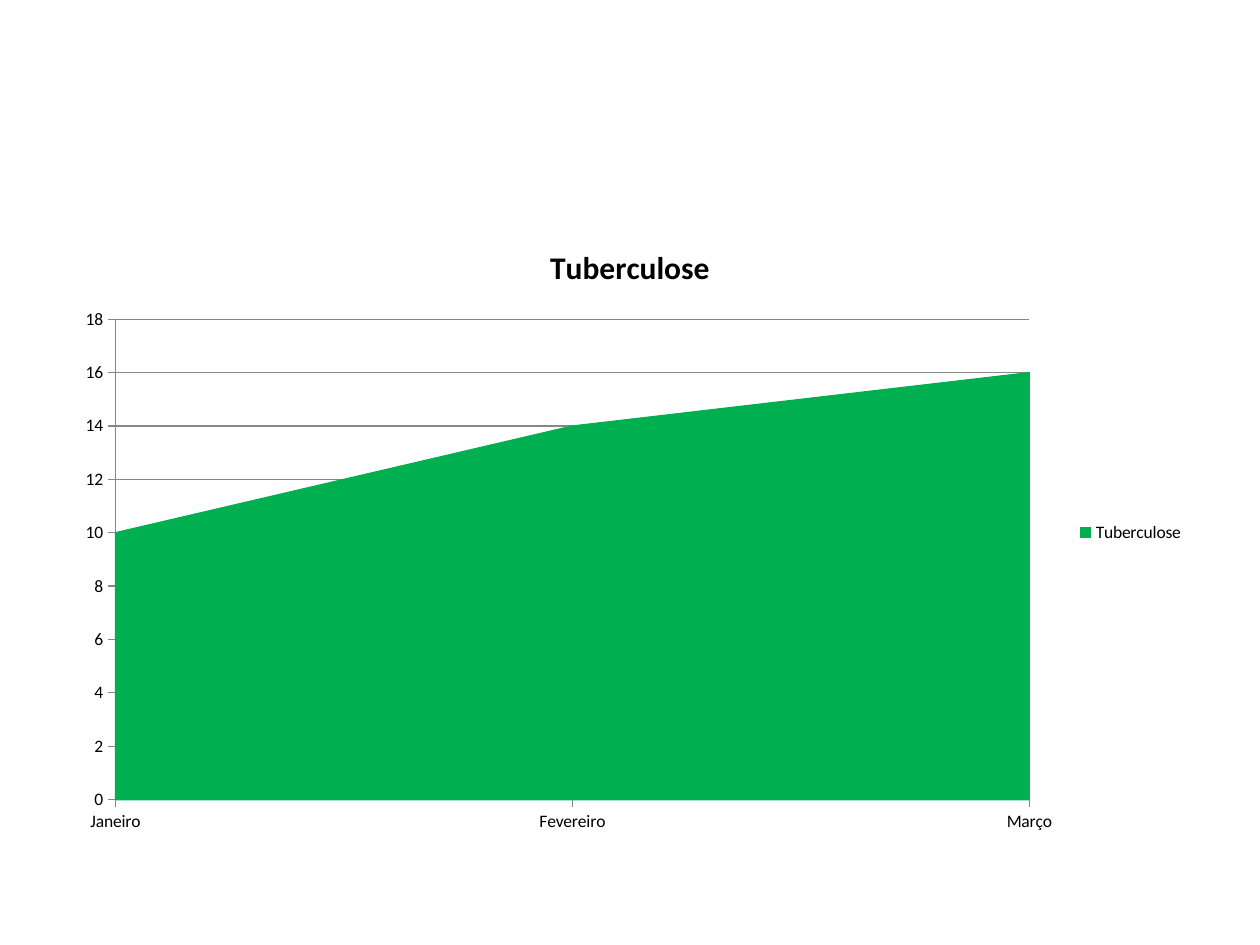
from typing import NamedTuple

import pptx
import pptx.chart.data
import pptx.dml.color
import pptx.enum.chart
import pptx.util

Cm = pptx.util.Cm
Pt = pptx.util.Pt
FONT = "Calibri"
BLACK = "000000"
GREY = "868686"


class Series(NamedTuple):
    name: str
    values: tuple[int, ...]
    color: str


MONTHS = ("Janeiro", "Fevereiro", "Março")
CASES = Series("Tuberculose", (10, 14, 16), "00B050")


def paint(target, color: str) -> None:
    if hasattr(target, "solid"):
        target.solid()
        target.fore_color.rgb = pptx.dml.color.RGBColor.from_string(color)
    else:
        target.color.rgb = pptx.dml.color.RGBColor.from_string(color)


def style(font, size: int, bold: bool = False) -> None:
    font.name = FONT
    font.size = Pt(size)
    font.bold = bold
    paint(font, BLACK)


def rule(line, color: str) -> None:
    paint(line, color)
    line.width = Pt(0.75)


def set_axis(axis, grid: bool) -> None:
    axis.has_major_gridlines = grid
    axis.major_tick_mark = pptx.enum.chart.XL_TICK_MARK.OUTSIDE
    axis.minor_tick_mark = pptx.enum.chart.XL_TICK_MARK.NONE
    rule(axis.format.line, GREY)
    if grid:
        rule(axis.major_gridlines.format.line, GREY)


def add_area(slide, series: Series) -> None:
    data = pptx.chart.data.CategoryChartData()
    data.categories = MONTHS
    data.add_series(series.name, series.values)
    chart = slide.shapes.add_chart(
        pptx.enum.chart.XL_CHART_TYPE.AREA,
        Cm(1.27), Cm(4.45), Cm(22.86), Cm(12.57), data,
    ).chart
    style(chart.font, 10)

    chart.has_title = True
    run = chart.chart_title.text_frame.paragraphs[0].add_run()
    run.text = series.name
    style(run.font, 18, True)
    chart.chart_title.include_in_layout = False

    chart.has_legend = True
    chart.legend.position = pptx.enum.chart.XL_LEGEND_POSITION.RIGHT
    chart.legend.include_in_layout = False

    set_axis(chart.category_axis, False)
    set_axis(chart.value_axis, True)
    chart.value_axis.minimum_scale = 0
    chart.value_axis.maximum_scale = 18
    chart.value_axis.major_unit = 2
    for cross in chart.value_axis._element.xpath("c:crossBetween"):
        cross.set("val", "midCat")

    plot = chart.plots[0]
    plot.vary_by_categories = False
    area = plot.series[0].format
    paint(area.fill, series.color)
    rule(area.line, series.color)


def main() -> None:
    """Build the tuberculosis area chart slide."""
    deck = pptx.Presentation()
    deck.slide_width = Cm(25.4)
    deck.slide_height = Cm(19.05)
    slide = deck.slides.add_slide(deck.slide_layouts[6])
    add_area(slide, CASES)
    deck.save("out.pptx")


if __name__ == "__main__":
    main()
